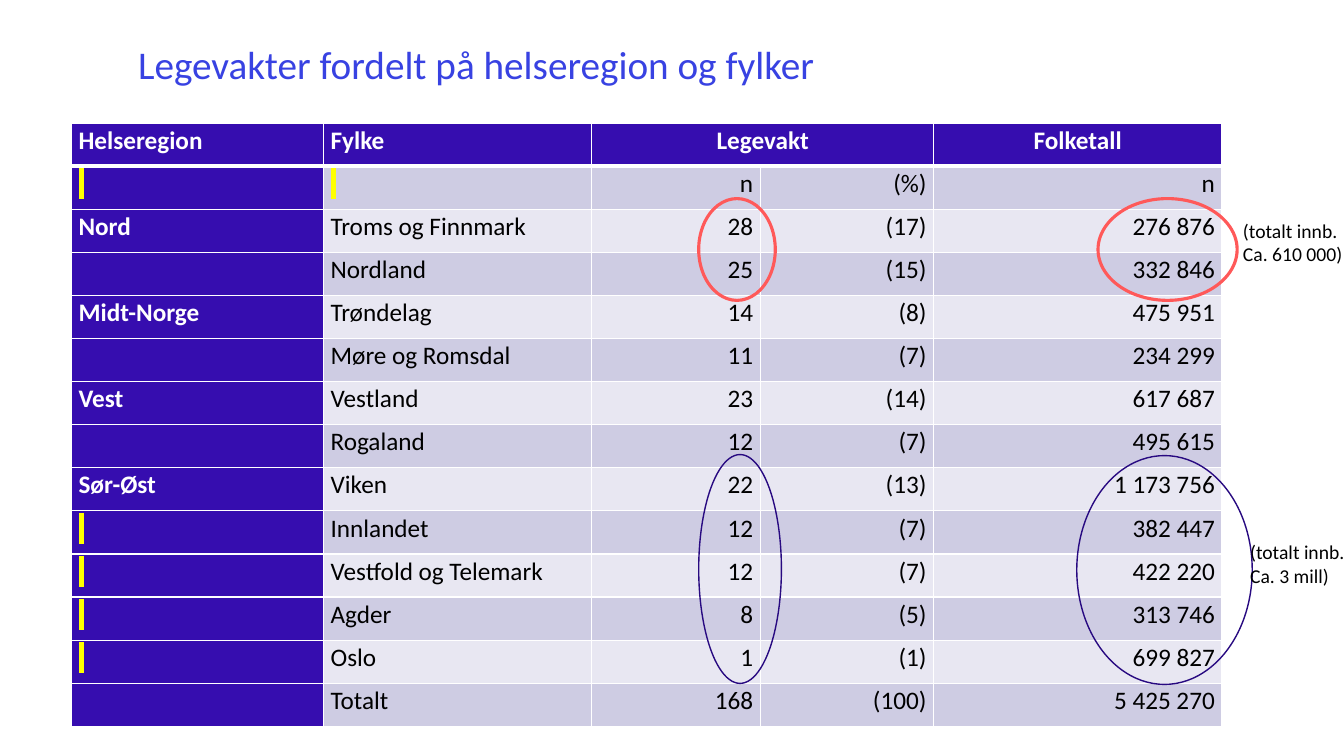
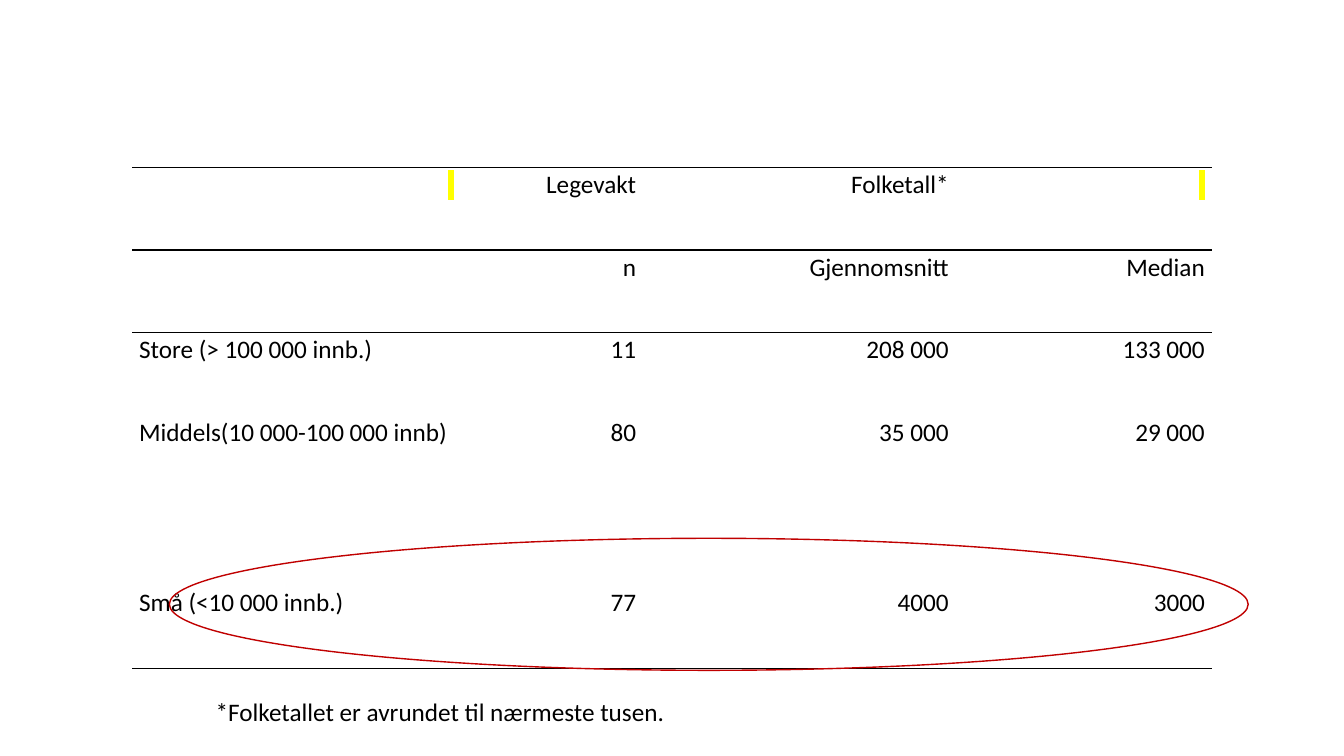
from lxml import etree
from pptx import Presentation
from pptx.dml.color import RGBColor
from pptx.enum.shapes import MSO_SHAPE
from pptx.enum.text import MSO_ANCHOR, MSO_AUTO_SIZE, PP_ALIGN
from pptx.oxml.ns import qn
from pptx.util import Inches, Pt

FONT = "Calibri"
BLACK, WHITE, YELLOW = "000000", "FFFFFF", "FFFF00"
TITLE_BLUE, INDIGO, NAVY = "3842E2", "360DAF", "280A81"
BANDS = ("CECCE3", "E8E7F2")
CORAL, RED = "FF5959", "C00000"
LEFT, CENTER, RIGHT = PP_ALIGN.LEFT, PP_ALIGN.CENTER, PP_ALIGN.RIGHT
MARK = " "  # a no-break space, shown highlighted

TITLE = "Legevakter fordelt på helseregion og fylker"
REGION_ROWS = [
    ("Helseregion", "Fylke", "Legevakt", "", "Folketall"),
    (MARK, MARK, "n", "(%)", "n"),
    ("Nord", "Troms og Finnmark", "28", "(17)", "276 876"),
    ("", "Nordland", "25", "(15)", "332 846"),
    ("Midt-Norge", "Trøndelag", "14", "(8)", "475 951"),
    ("", "Møre og Romsdal", "11", "(7)", "234 299"),
    ("Vest", "Vestland", "23", "(14)", "617 687"),
    ("", "Rogaland", "12", "(7)", "495 615"),
    ("Sør-Øst", "Viken", "22", "(13)", "1 173 756"),
    (MARK, "Innlandet", "12", "(7)", "382 447"),
    (MARK, "Vestfold og Telemark", "12", "(7)", "422 220"),
    (MARK, "Agder", "8", "(5)", "313 746"),
    (MARK, "Oslo", "1", "(1)", "699 827"),
    ("", "Totalt", "168", "(100)", "5 425 270"),
]
REGION_COLUMNS = (2.5, 2.66, 1.67, 1.72, 2.86)
REGION_ELLIPSES = [
    ((6.93, 1.97, 0.76, 1.01), CORAL, 2.25),
    ((10.89, 1.97, 1.38, 1.01), CORAL, 2.25),
    ((10.68, 4.52, 1.74, 2.27), NAVY, 1),
    ((6.93, 4.51, 0.82, 2.27), NAVY, 1),
]
POPULATION_NOTES = [
    ((12.23, 2.12, 1.33, 0.57), ("(totalt innb.", "Ca. 610 000)")),
    ((12.3, 5.31, 1.48, 0.57), ("(totalt innb.", "Ca. 3 mill)")),
]

SIZE_ROWS = [
    (MARK, "Legevakt", "Folketall*", MARK),
    ("", "n", "Gjennomsnitt", "Median"),
    ("Store (> 100 000 innb.)", "11", "208 000", "133 000"),
    ("Middels(10 000-100 000 innb)", "80", "35 000", "29 000"),
    ("Små (<10 000 innb.)", "77", "4000", "3000"),
]
SIZE_COLUMNS = (3.26, 1.81, 3.1, 2.54)
SIZE_HEIGHTS = (0.82, 0.82, 0.82, 1.69, 0.82)
RULED_EDGES = {0, 1, 2, len(SIZE_ROWS)}
FOOTNOTE = "*Folketallet er avrundet til nærmeste tusen."


def color(value):
    return RGBColor.from_string(value)


def inches(box):
    return [Inches(length) for length in box]


def write(paragraph, text, size, ink, bold=False, align=LEFT, spacing=1.0, after=0):
    paragraph.alignment = align
    paragraph.line_spacing = spacing
    paragraph.space_after = Pt(after)
    paragraph.font.size = Pt(size)
    if not text:
        return
    run = paragraph.add_run()
    run.text = text
    font = run.font
    font.name, font.size, font.bold = FONT, Pt(size), bold
    font.color.rgb = color(ink)
    if text == MARK:
        highlight = etree.Element(qn("a:highlight"))
        etree.SubElement(highlight, qn("a:srgbClr"), val=YELLOW)
        font.fill._xPr.find(qn("a:solidFill")).addnext(highlight)


def set_borders(cell, **lines):
    """Each line is (colour, width in points), or None for no line."""
    properties = cell._tc.get_or_add_tcPr()
    for side in "LRTB":
        line = lines.get(side)
        border = etree.SubElement(properties, qn(f"a:ln{side}"))
        if line:
            border.set("w", str(Pt(line[1])))
            fill = etree.SubElement(border, qn("a:solidFill"))
            etree.SubElement(fill, qn("a:srgbClr"), val=line[0])
        else:
            etree.SubElement(border, qn("a:noFill"))


def add_plain_table(slide, left, top, columns, heights):
    box = inches((left, top, sum(columns), sum(heights)))
    table = slide.shapes.add_table(len(heights), len(columns), *box).table
    table.first_row = table.horz_banding = False
    for column, width in zip(table.columns, columns):
        column.width = Inches(width)
    for row, height in zip(table.rows, heights):
        row.height = Inches(height)
    return table


def fill_cell(cell, text, fill, borders, **style):
    set_borders(cell, **borders)
    cell.fill.solid()
    cell.fill.fore_color.rgb = color(fill)
    cell.margin_left = cell.margin_right = Inches(0.07)
    cell.margin_top = cell.margin_bottom = 0
    write(cell.text_frame.paragraphs[0], text, 18, spacing=1.07, **style)


def add_ellipse(slide, box, line, width):
    ellipse = slide.shapes.add_shape(MSO_SHAPE.OVAL, *inches(box))
    ellipse.shadow.inherit = False
    ellipse.fill.background()
    ellipse.line.color.rgb = color(line)
    ellipse.line.width = Pt(width)


def add_text(slide, box, lines, size, **style):
    frame = slide.shapes.add_textbox(*inches(box)).text_frame
    frame.word_wrap = True
    for index, line in enumerate(lines):
        paragraph = frame.add_paragraph() if index else frame.paragraphs[0]
        write(paragraph, line, size, BLACK, **style)


def build_region_slide(presentation):
    slide = presentation.slides.add_slide(presentation.slide_layouts[5])
    count = len(REGION_ROWS)
    table = add_plain_table(slide, 0.71, 1.22, REGION_COLUMNS, [5.99 / count] * count)
    thin, thick = (WHITE, 1), (WHITE, 3)
    for r, row in enumerate(REGION_ROWS):
        for c, text in enumerate(row):
            heading = r == 0 or c == 0
            if c < 2:
                align = LEFT
            else:
                align = CENTER if r == 0 else RIGHT
            borders = {"L": thin, "R": thin,
                       "T": thick if r == 1 else thin,
                       "B": thick if r == 0 else thin}
            fill_cell(table.cell(r, c), text,
                      INDIGO if heading else BANDS[(r + 1) % 2], borders,
                      ink=WHITE if heading else BLACK, bold=heading,
                      align=align, after=5)
    table.cell(0, 2).merge(table.cell(0, 3))

    title = slide.shapes.title
    title.left, title.top, title.width, title.height = inches((1.27, 0.4, 9.16, 0.53))
    frame = title.text_frame
    frame.auto_size = MSO_AUTO_SIZE.NONE
    frame.vertical_anchor = MSO_ANCHOR.MIDDLE
    write(frame.paragraphs[0], TITLE, 28, TITLE_BLUE, spacing=0.9)

    for ellipse in REGION_ELLIPSES:
        add_ellipse(slide, *ellipse)
    for box, lines in POPULATION_NOTES:
        add_text(slide, box, lines, 14)


def build_size_slide(presentation):
    slide = presentation.slides.add_slide(presentation.slide_layouts[6])
    table = add_plain_table(slide, 1.31, 1.66, SIZE_COLUMNS, SIZE_HEIGHTS)
    rule = (BLACK, 1)
    for r, row in enumerate(SIZE_ROWS):
        borders = {"T": rule if r in RULED_EDGES else None,
                   "B": rule if r + 1 in RULED_EDGES else None}
        for c, text in enumerate(row):
            align = LEFT if c == 0 and r > 1 else RIGHT
            fill_cell(table.cell(r, c), text, WHITE, borders,
                      ink=BLACK, align=align, after=8)
    add_text(slide, (2.04, 6.84, 6.67, 0.41), [FOOTNOTE], 18, spacing=1.07, after=8)
    add_ellipse(slide, (1.68, 5.34, 10.7, 1.31), RED, 1)


def main():
    presentation = Presentation()
    presentation.slide_width, presentation.slide_height = Inches(13.33), Inches(7.5)
    build_region_slide(presentation)
    build_size_slide(presentation)
    presentation.save("out.pptx")


if __name__ == "__main__":
    main()
